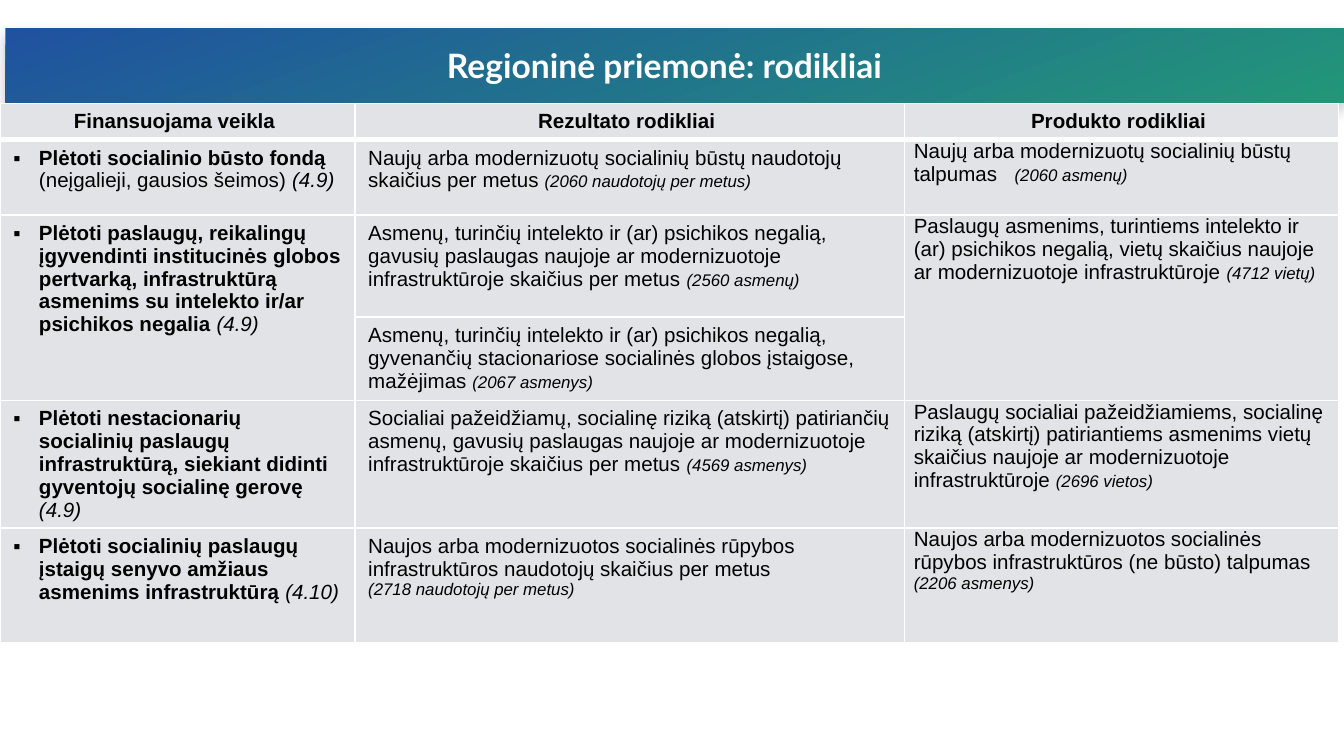
import lxml.etree
import pptx
import pptx.dml.color
import pptx.enum.shapes
import pptx.enum.text
import pptx.oxml.ns
import pptx.util

Inches = pptx.util.Inches
Pt = pptx.util.Pt
RGB = pptx.dml.color.RGBColor.from_string
qn = pptx.oxml.ns.qn
ALIGN = pptx.enum.text.PP_ALIGN

THEME = {
    "blue": "2052A0", "green": "229678", "shadow": "1F3B50",
    "white": "FFFFFF", "black": "000000", "cell": "E2E3E6",
    "title": 18, "body": 11, "note": 9,
    "title_font": "Lato", "body_font": "Arial",
}


def add_run(paragraph, text, size="body", **formats):
    run = paragraph.add_run()
    run.text = text
    values = {"name": THEME["body_font"], "size": Pt(THEME[size]), "bold": False, "italic": False}
    for attribute, value in (values | formats).items():
        setattr(run.font, attribute, value)
    run.font.color.rgb = RGB(THEME["white" if size == "title" else "black"])


def style_cell(cell, top, bottom):
    properties = cell._tc.get_or_add_tcPr()
    for side, width in {"lnL": 1, "lnR": 1, "lnT": top, "lnB": bottom}.items():
        line = lxml.etree.SubElement(properties, qn(f"a:{side}"), w=str(Pt(width)))
        fill = lxml.etree.SubElement(line, qn("a:solidFill"))
        lxml.etree.SubElement(fill, qn("a:srgbClr"), val=THEME["white"])
    cell.fill.solid()
    cell.fill.fore_color.rgb = RGB(THEME["cell"])


prs = pptx.Presentation()
prs.slide_width, prs.slide_height = Inches(10), Inches(10 * 9 / 16)
slide = prs.slides.add_slide(prs.slide_layouts[6])

banner = slide.shapes.add_shape(
    pptx.enum.shapes.MSO_SHAPE.RECTANGLE, Inches(0.04), Inches(0.21), Inches(9.96), Inches(0.55))
banner.line.fill.background()
banner.fill.gradient()
banner.fill.gradient_angle = 290
for stop, (position, color) in zip(banner.fill.gradient_stops, [(0, "blue"), (1, "green")]):
    stop.position = position
    stop.color.rgb = RGB(THEME[color])

banner.shadow.inherit = False
effects = banner._element.spPr.find(qn("a:effectLst"))
shadow = lxml.etree.SubElement(
    effects, qn("a:outerShdw"), blurRad=str(Pt(8)), dist=str(Pt(4)), dir="5400000", rotWithShape="0")
shadow_color = lxml.etree.SubElement(shadow, qn("a:srgbClr"), val=THEME["shadow"])
lxml.etree.SubElement(shadow_color, qn("a:alpha"), val="30000")

title_frame = banner.text_frame
title_frame.word_wrap = True
title_frame.margin_right = Inches(0.25)
title_frame.vertical_anchor = pptx.enum.text.MSO_ANCHOR.MIDDLE
title = title_frame.paragraphs[0]
title.alignment = ALIGN.CENTER
add_run(title, "Regioninė priemonė: rodikliai", "title", name=THEME["title_font"], bold=True)

headings = ["Finansuojama veikla ", "Rezultato rodikliai ", "Produkto rodikliai "]
activities = {
    1: ("Plėtoti socialinio būsto fondą ", "(neįgalieji, gausios šeimos) ", "(4.9)"),
    2: ("Plėtoti paslaugų, reikalingų įgyvendinti institucinės globos pertvarką, infrastruktūrą "
        "asmenims su intelekto ir/ar psichikos negalia ", "", "(4.9)"),
    4: ("Plėtoti nestacionarių socialinių paslaugų infrastruktūrą, siekiant didinti gyventojų "
        "socialinę gerovę ", "", "(4.9)"),
    5: ("Plėtoti socialinių paslaugų įstaigų senyvo amžiaus asmenims infrastruktūrą ", "", "(4.10)"),
}
results = {
    1: ("Naujų arba modernizuotų socialinių būstų naudotojų skaičius per metus ",
        "(2060 naudotojų per metus)"),
    2: ("Asmenų, turinčių intelekto ir (ar) psichikos negalią, gavusių paslaugas naujoje ar "
        "modernizuotoje infrastruktūroje skaičius per metus ", "(2560 asmenų)"),
    3: ("Asmenų, turinčių intelekto ir (ar) psichikos negalią, gyvenančių stacionariose "
        "socialinės globos įstaigose, mažėjimas ", "(2067 asmenys)"),
    4: ("Socialiai pažeidžiamų, socialinę riziką (atskirtį) patiriančių asmenų, gavusių paslaugas "
        "naujoje ar modernizuotoje infrastruktūroje skaičius per metus ", "(4569 asmenys)"),
    5: ("Naujos arba modernizuotos socialinės rūpybos infrastruktūros naudotojų skaičius per metus",
        "(2718 naudotojų per metus)"),
}
products = {
    1: ("Naujų arba modernizuotų socialinių būstų talpumas\t", "(2060 asmenų)"),
    2: ("Paslaugų asmenims, turintiems intelekto ir (ar) psichikos negalią, vietų skaičius naujoje "
        "ar modernizuotoje infrastruktūroje ", "(4712 vietų)"),
    4: ("Paslaugų socialiai pažeidžiamiems, socialinę riziką (atskirtį) patiriantiems asmenims "
        "vietų skaičius naujoje ar modernizuotoje infrastruktūroje ", "(2696 vietos)"),
    5: ("Naujos arba modernizuotos socialinės rūpybos infrastruktūros (ne būsto) talpumas ",
        "(2206 asmenys)"),
}

column_widths = [2.64, 4.09, 3.23]
row_heights = [0.27, 0.56, 0.76, 0.62, 0.8, 0.85]
indicators = slide.shapes.add_table(
    len(row_heights), len(column_widths), Inches(0), Inches(0.77),
    Inches(sum(column_widths)), Inches(sum(row_heights))).table
indicators.first_row = indicators.horz_banding = False
for column, width in zip(indicators.columns, column_widths):
    column.width = Inches(width)
for row, height in zip(indicators.rows, row_heights):
    row.height = Inches(height)
for row_number, row in enumerate(indicators.rows):
    for cell in row.cells:
        style_cell(cell, 3 if row_number == 1 else 1, 3 if row_number == 0 else 1)
for column_number in (0, 2):
    indicators.cell(2, column_number).merge(indicators.cell(3, column_number))

for column_number, heading in enumerate(headings):
    paragraph = indicators.cell(0, column_number).text_frame.paragraphs[0]
    paragraph.alignment = ALIGN.CENTER
    add_run(paragraph, heading, bold=True)

for row_number, (activity, detail, code) in activities.items():
    paragraph = indicators.cell(row_number, 0).text_frame.paragraphs[0]
    bullet = paragraph._p.get_or_add_pPr()
    bullet.set("marL", str(Inches(0.19)))
    bullet.set("indent", str(-Inches(0.19)))
    lxml.etree.SubElement(bullet, qn("a:buFont"), typeface=THEME["body_font"])
    lxml.etree.SubElement(bullet, qn("a:buChar"), char="▪")
    add_run(paragraph, activity, bold=True)
    if detail:
        add_run(paragraph, detail)
    add_run(paragraph, code, italic=True)

for column_number, entries in enumerate([results, products], start=1):
    for row_number, (indicator, target) in entries.items():
        cell = indicators.cell(row_number, column_number)
        if entries is products:
            cell.margin_left = cell.margin_right = Inches(0.07)
            cell.margin_top = cell.margin_bottom = Inches(0)
        paragraph = cell.text_frame.paragraphs[0]
        if indicator.endswith("\t"):
            tabs = lxml.etree.SubElement(paragraph._p.get_or_add_pPr(), qn("a:tabLst"))
            lxml.etree.SubElement(tabs, qn("a:tab"), pos=str(Inches(0.75)), algn="l")
        add_run(paragraph, indicator)
        if not indicator[-1].isspace():
            paragraph = cell.text_frame.add_paragraph()
        add_run(paragraph, target, "note", italic=True)

prs.save("out.pptx")
